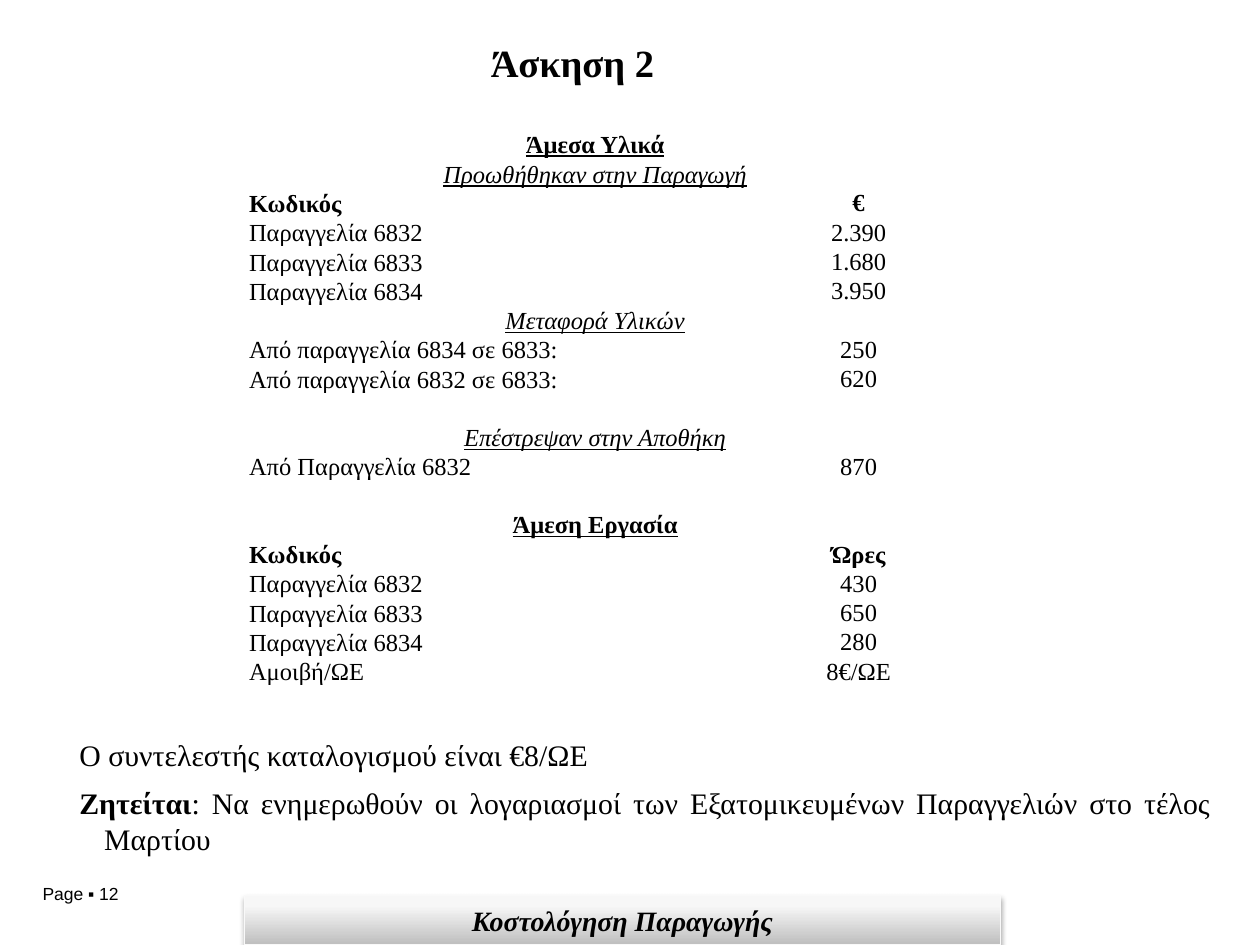
import pptx
import pptx.util
import pptx.dml.color
import pptx.enum.dml
import pptx.enum.shapes
import pptx.enum.text
import pptx.oxml
from pptx.util import Cm, Pt

ALIGN = pptx.enum.text.PP_ALIGN
ANCHOR = pptx.enum.text.MSO_ANCHOR
NS = 'xmlns:a="http://schemas.openxmlformats.org/drawingml/2006/main"'


def rgb(color):
    return pptx.dml.color.RGBColor.from_string(color)


def write(p, text, size=14, font="Times New Roman", color="000000",
          bold=False, italic=False, underline=False, align=None):
    """Append a formatted run to a paragraph."""
    r = p.add_run()
    r.text = text
    r.font.size, r.font.name = Pt(size), font
    r.font.bold, r.font.italic, r.font.underline = bold, italic, underline
    r.font.color.rgb = rgb(color)
    if align is not None:
        p.alignment = align


prs = pptx.Presentation()
prs.slide_width, prs.slide_height = Cm(25.4), Cm(19.05)
s = prs.slides.add_slide(prs.slide_layouts[1])

# Title
title = s.shapes.title
title.left, title.top, title.width, title.height = Cm(0.86), Cm(0.76), Cm(21.36), Cm(1.8)
tf = title.text_frame
tf.auto_size = pptx.enum.text.MSO_AUTO_SIZE.NONE
tf.vertical_anchor = ANCHOR.TOP
tf.margin_left = tf.margin_right = 0
tf.paragraphs[0].line_spacing = 0.9
write(tf.paragraphs[0], "Άσκηση 2", size=22, bold=True, align=ALIGN.CENTER)

# Coefficient and question
body = s.placeholders[1]
body.left, body.top, body.width, body.height = Cm(1.6), Cm(14.86), Cm(22.81), Cm(2.36)
tf = body.text_frame
tf.auto_size = pptx.enum.text.MSO_AUTO_SIZE.NONE
tf.margin_left = tf.margin_right = tf.margin_top = tf.margin_bottom = 0
question = [
    [("Ο συντελεστής καταλογισμού είναι €8/ΩΕ", False)],
    [("Ζητείται", True),
     (": Να ενημερωθούν οι λογαριασμοί των Εξατομικευμένων Παραγγελιών "
      "στο τέλος Μαρτίου", False)],
]
for i, runs in enumerate(question):
    p = tf.paragraphs[0] if i == 0 else tf.add_paragraph()
    pPr = p._p.get_or_add_pPr()
    pPr.set("marL", str(Cm(0.5)))
    pPr.set("indent", str(-Cm(0.5)))
    pPr.append(pptx.oxml.parse_xml(f"<a:buNone {NS}/>"))
    p.space_before, p.space_after = Pt(0), Pt(7)
    for text, bold in runs:
        write(p, text, size=17, bold=bold, align=ALIGN.JUSTIFY)

# Materials and labour: (kind, label, value)
rows = [
    ("section", "Άμεσα Υλικά", ""),
    ("group", "Προωθήθηκαν στην Παραγωγή", ""),
    ("head", "Κωδικός", "€"),
    ("item", "Παραγγελία 6832", "2.390"),
    ("item", "Παραγγελία 6833", "1.680"),
    ("item", "Παραγγελία 6834", "3.950"),
    ("group", "Μεταφορά Υλικών", ""),
    ("item", "Από παραγγελία 6834 σε 6833:", "250"),
    ("item", "Από παραγγελία 6832 σε 6833:", "620"),
    ("item", "", ""),
    ("group", "Επέστρεψαν στην Αποθήκη", ""),
    ("item", "Από Παραγγελία 6832", "870"),
    ("item", "", ""),
    ("section", "Άμεση Εργασία", ""),
    ("head", "Κωδικός", "Ώρες"),
    ("item", "Παραγγελία 6832", "430"),
    ("item", "Παραγγελία 6833", "650"),
    ("item", "Παραγγελία 6834", "280"),
    ("item", "Αμοιβή/ΩΕ", "8€/ΩΕ"),
]
formats = {
    "section": dict(bold=True, underline=True),
    "group": dict(italic=True, underline=True),
    "head": dict(bold=True),
    "item": {},
}
row_height = Cm(0.59)
table = s.shapes.add_table(len(rows), 2, Cm(5), Cm(2.62), Cm(14),
                           row_height * len(rows)).table
table.first_row = table.horz_banding = False
table.columns[0].width, table.columns[1].width = Cm(10.62), Cm(3.38)
for i, (kind, *texts) in enumerate(rows):
    table.rows[i].height = row_height
    spans = kind in ("section", "group")
    for j, text in enumerate(texts):
        cell = table.cell(i, j)
        cell.fill.background()
        cell.margin_left = cell.margin_right = cell.margin_top = Cm(0.02)
        cell.margin_bottom = 0
        centred = spans or j == 1
        cell.vertical_anchor = ANCHOR.MIDDLE if j == 1 or kind == "section" else ANCHOR.BOTTOM
        p = cell.text_frame.paragraphs[0]
        if text:
            write(p, text, align=ALIGN.CENTER if centred else ALIGN.LEFT, **formats[kind])
        else:
            # keeps an empty cell from stretching its row
            p._p.append(pptx.oxml.parse_xml(f'<a:endParaRPr {NS} sz="1200"/>'))
    if spans:
        table.cell(i, 0).merge(table.cell(i, 1))

# Page number
page = s.shapes.add_textbox(Cm(0.61), Cm(17.68), Cm(3.73), Cm(0.69))
page.text_frame.word_wrap = True
write(page.text_frame.paragraphs[0], "Page ▪ 12", size=10, font="Arial")

# Course bar
bar = s.shapes.add_shape(pptx.enum.shapes.MSO_SHAPE.RECTANGLE,
                         Cm(4.93), Cm(18.06), Cm(15.24), Cm(0.99))
bar.fill.gradient()
bar.fill.gradient_angle = 90
for stop, color, position in zip(bar.fill.gradient_stops, ("BEBEBE", "F7F7F7"), (0, 0.8)):
    stop.color.rgb = rgb(color)
    stop.position = position
bar.line.color.rgb = rgb("F9F9F9")
bar.line.width = Pt(0.75)
bar._element.spPr.append(pptx.oxml.parse_xml(
    f'<a:effectLst {NS}><a:outerShdw blurRad="{Pt(3.1)}" dist="{Pt(1.8)}" dir="5400000" '
    'rotWithShape="0"><a:srgbClr val="000000"><a:alpha val="35000"/></a:srgbClr>'
    '</a:outerShdw></a:effectLst>'))
tf = bar.text_frame
tf.margin_left = tf.margin_right = tf.margin_top = tf.margin_bottom = 0
tf.vertical_anchor = ANCHOR.MIDDLE
write(tf.paragraphs[0], "Κοστολόγηση Παραγωγής", size=16, bold=True, italic=True,
      align=ALIGN.CENTER)

prs.save("out.pptx")
